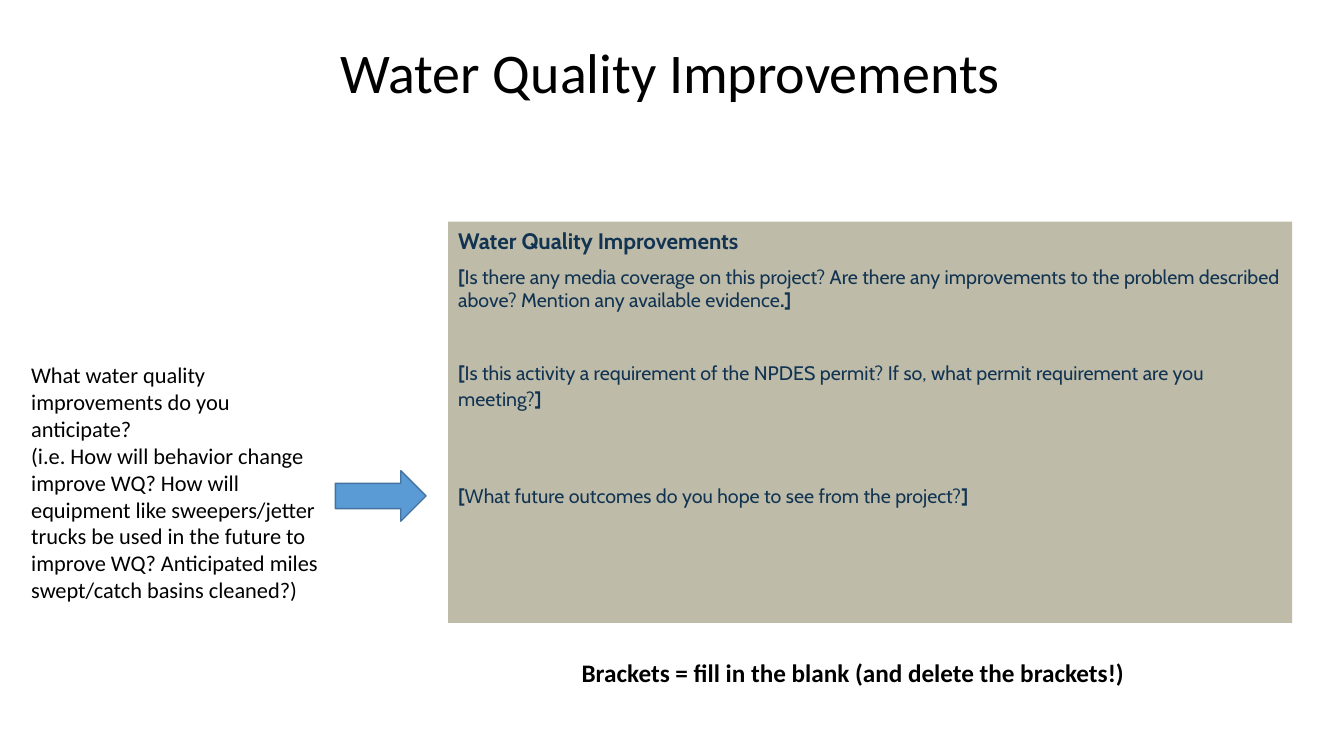
from pptx import Presentation
from pptx.dml.color import RGBColor
from pptx.enum.shapes import MSO_SHAPE
from pptx.enum.text import MSO_ANCHOR, PP_ALIGN
from pptx.util import Inches, Pt

BLACK = RGBColor(0x00, 0x00, 0x00)
NAVY = RGBColor(0x12, 0x34, 0x52)
STONE = RGBColor(0xBE, 0xBC, 0xA9)
BLUE = RGBColor(0x5B, 0x9B, 0xD5)
BLUE_EDGE = RGBColor(0x43, 0x73, 0x9E)

RECTANGLE = MSO_SHAPE.RECTANGLE
RIGHT_ARROW = MSO_SHAPE.RIGHT_ARROW
TOP = MSO_ANCHOR.TOP
LEFT, CENTER = PP_ALIGN.LEFT, PP_ALIGN.CENTER

BODY_FONT, PANEL_FONT = "Calibri", "Cabin"


class SlideBuilder:
    """Places elements by percent of the slide's width and height."""

    def __init__(self, presentation):
        self.width = presentation.slide_width
        self.height = presentation.slide_height
        self.slide = presentation.slides.add_slide(presentation.slide_layouts[6])

    def place(self, left, top, width, height):
        return (round(self.width * left / 100), round(self.height * top / 100),
                round(self.width * width / 100), round(self.height * height / 100))

    def shape(self, kind, area, fill, edge=None):
        shape = self.slide.shapes.add_shape(kind, *self.place(*area))
        shape.shadow.inherit = False
        shape.fill.solid()
        shape.fill.fore_color.rgb = fill
        if edge is None:
            shape.line.fill.background()
        else:
            shape.line.color.rgb = edge
            shape.line.width = Pt(1)
        return shape

    def text_box(self, area, lines, size, bold=False, align=LEFT, spacing=1.0, wrap=True):
        frame = self.slide.shapes.add_textbox(*self.place(*area)).text_frame
        frame.word_wrap = wrap
        frame.vertical_anchor = TOP
        for index, line in enumerate(lines):
            self.paragraph(frame, index, [(line, bold)], BODY_FONT, size, BLACK,
                           align, spacing)
        return frame

    def paragraph(self, frame, index, runs, font, size, color,
                  align=LEFT, spacing=1.0, after=0):
        paragraph = frame.add_paragraph() if index else frame.paragraphs[0]
        paragraph.alignment = align
        paragraph.line_spacing = spacing
        paragraph.space_after = Pt(after)
        for text, bold in runs:
            run = paragraph.add_run()
            run.text = text
            run.font.name = font
            run.font.size = Pt(size)
            run.font.bold = bold
            run.font.color.rgb = color

    def panel(self, area, heading, prompts):
        frame = self.shape(RECTANGLE, area, STONE).text_frame
        frame.word_wrap = True
        frame.vertical_anchor = TOP
        self.paragraph(frame, 0, [(heading, True)], PANEL_FONT, 16, NAVY, after=8)
        for index, (question, closing, spacing, after) in enumerate(prompts, 1):
            runs = [("[", True), (question, False), (closing, True)]
            self.paragraph(frame, index, runs, PANEL_FONT, 14, NAVY,
                           spacing=spacing, after=after)


def main():
    presentation = Presentation()
    presentation.slide_width = Inches(13.33)
    presentation.slide_height = Inches(7.5)
    builder = SlideBuilder(presentation)

    # Title
    title = builder.text_box((4.5, 3.47, 91.67, 19.33), ["Water Quality Improvements"],
                             40, align=CENTER, spacing=0.9)
    title.margin_top = Inches(0.19)
    title.margin_right = Inches(0.22)

    # Panel of prompts: question, closing, line spacing, room left for the answer
    builder.panel((33.35, 29.33, 62.79, 53.07), "Water Quality Improvements", [
        ("Is there any media coverage on this project? Are there any improvements to "
         "the problem described above? Mention any available evidence", ".]", 1.0, 33),
        ("Is this activity a requirement of the NPDES permit? If so, what permit "
         "requirement are you meeting?", "]", 1.12, 50),
        ("What future outcomes do you hope to see from the project?", "]", 1.12, 9),
    ])

    # Guidance and its arrow
    builder.shape(RIGHT_ARROW, (24.95, 62.27, 6.75, 6.67), BLUE, BLUE_EDGE)
    builder.text_box((1.58, 47.15, 23.33, 43.47), [
        "What water quality improvements do you anticipate?",
        "(i.e. How will behavior change improve WQ? How will equipment like "
        "sweepers/jetter trucks be used in the future to improve WQ? Anticipated "
        "miles swept/catch basins cleaned?)",
    ], 16)

    # Caption
    builder.text_box((42.36, 86.27, 42.24, 5.33),
                     ["Brackets = fill in the blank (and delete the brackets!)"],
                     18, bold=True, align=CENTER, wrap=False)

    presentation.save("out.pptx")


if __name__ == "__main__":
    main()
